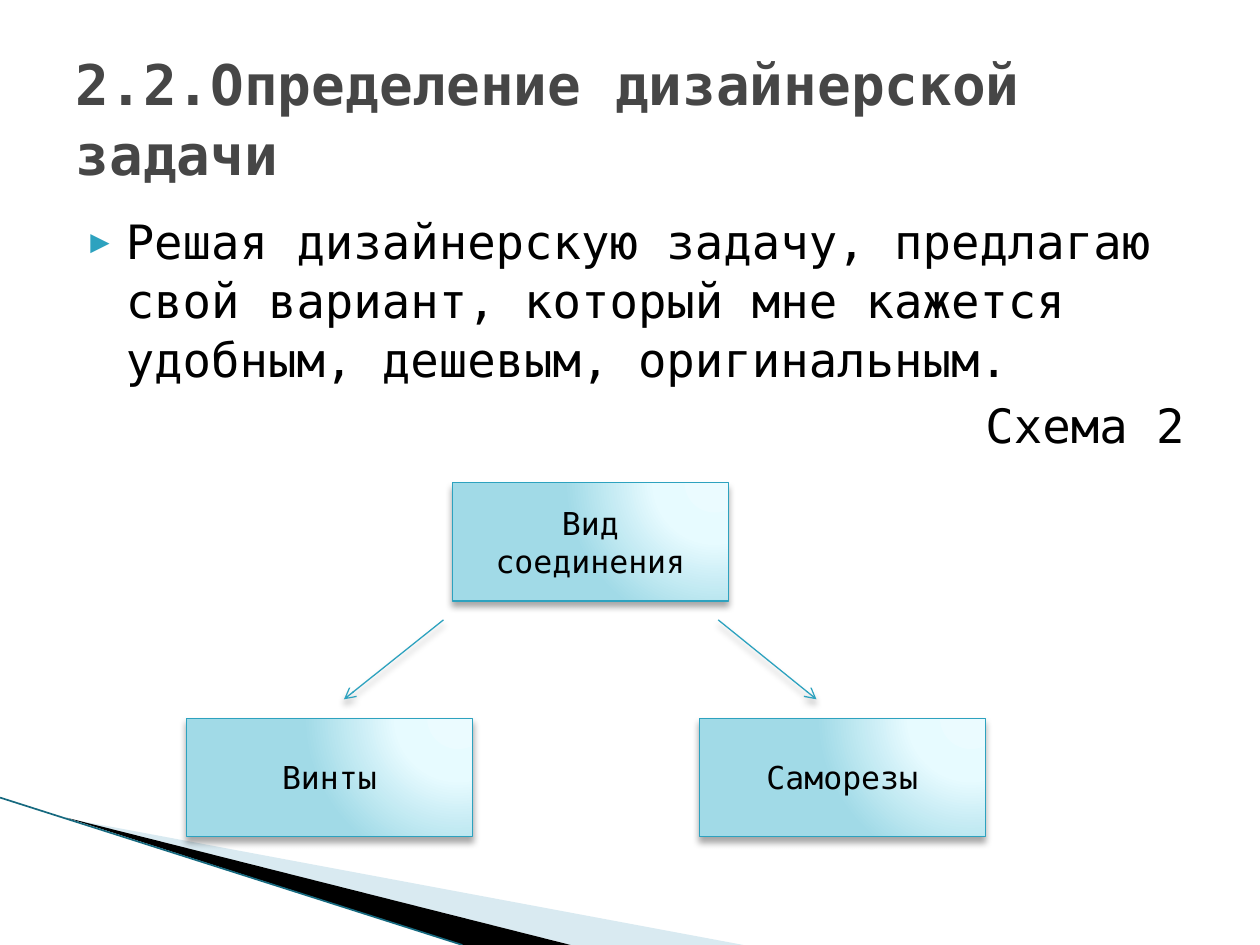
from lxml import etree
from pptx import Presentation
from pptx.dml.color import RGBColor
from pptx.enum.shapes import MSO_CONNECTOR, MSO_SHAPE
from pptx.enum.text import MSO_ANCHOR, MSO_AUTO_SIZE, PP_ALIGN
from pptx.oxml import parse_xml
from pptx.oxml.ns import nsdecls, qn
from pptx.util import Inches, Pt

STRAIGHT = MSO_CONNECTOR.STRAIGHT
RECTANGLE = MSO_SHAPE.RECTANGLE
MIDDLE = MSO_ANCHOR.MIDDLE
NO_AUTOFIT = MSO_AUTO_SIZE.NONE
LEFT, CENTER, RIGHT = PP_ALIGN.LEFT, PP_ALIGN.CENTER, PP_ALIGN.RIGHT

FONT = "DejaVu Sans Mono"
BLACK = RGBColor(0x00, 0x00, 0x00)
TITLE_GRAY = RGBColor(0x46, 0x46, 0x46)
TEAL = RGBColor(0x2D, 0xA2, 0xBF)
DARK_TEAL = RGBColor(0x16, 0x69, 0x7F)
PALE_BLUE = RGBColor(0xD9, 0xEA, 0xF1)
GRADIENT_STOPS = [
    (0, RGBColor(0xEB, 0xFB, 0xFF)),
    (40, RGBColor(0xE7, 0xFB, 0xFF)),
    (100, RGBColor(0xA1, 0xDA, 0xE7)),
]
LINE_SPACING = 1.04


def format_paragraph(paragraph, size, color, alignment, bold=False):
    paragraph.alignment = alignment
    for run in paragraph.runs:
        run.font.name = FONT
        run.font.size = Pt(size)
        run.font.bold = bold
        run.font.color.rgb = color


def add_effects(shape, shadow):
    effects = etree.SubElement(shape._element.spPr, qn("a:effectLst"))
    if shadow:
        effects.append(parse_xml(
            f'<a:outerShdw {nsdecls("a")} blurRad="{Pt(4)}" dist="{Pt(3)}" '
            'dir="5400000" rotWithShape="0"><a:srgbClr val="000000">'
            '<a:alpha val="35000"/></a:srgbClr></a:outerShdw>'))


def add_wedge(slide, points, color):
    corners = [(Inches(x), Inches(y)) for x, y in points]
    builder = slide.shapes.build_freeform(*corners[0])
    builder.add_line_segments(corners[1:], close=True)
    wedge = builder.convert_to_shape()
    wedge.shadow.inherit = False
    wedge.fill.solid()
    wedge.fill.fore_color.rgb = color
    wedge.line.fill.background()


def add_line(slide, start, end, color, width, arrow=False):
    points = [Inches(value) for value in (*start, *end)]
    connector = slide.shapes.add_connector(STRAIGHT, *points)
    connector.line.color.rgb = color
    connector.line.width = Pt(width)
    if arrow:
        line = connector.line._get_or_add_ln()
        etree.SubElement(line, qn("a:tailEnd"), type="arrow")
    add_effects(connector, shadow=arrow)


def add_title(slide, text):
    title = slide.shapes.title
    title.left, title.top = Inches(0.5), Inches(0.3)
    title.width, title.height = Inches(9), Inches(1.25)
    frame = title.text_frame
    frame.text = text
    frame.word_wrap = True
    frame.auto_size = NO_AUTOFIT
    frame.vertical_anchor = MIDDLE
    paragraph = frame.paragraphs[0]
    paragraph.line_spacing = LINE_SPACING
    format_paragraph(paragraph, 32, TITLE_GRAY, LEFT, bold=True)


def add_bullet(paragraph):
    properties = paragraph._p.get_or_add_pPr()
    properties.set("marL", str(Inches(0.4)))
    properties.set("indent", str(Inches(-0.28)))
    color = etree.SubElement(properties, qn("a:buClr"))
    etree.SubElement(color, qn("a:srgbClr"), val=str(TEAL))
    etree.SubElement(properties, qn("a:buSzPct"), val="68000")
    etree.SubElement(properties, qn("a:buFont"), typeface=FONT)
    etree.SubElement(properties, qn("a:buChar"), char="▶")


def add_body(slide, statement, caption):
    box = slide.shapes.add_textbox(Inches(0.5), Inches(1.62), Inches(9), Inches(4.95))
    frame = box.text_frame
    frame.word_wrap = True
    first = frame.paragraphs[0]
    first.text = statement
    add_bullet(first)
    second = frame.add_paragraph()
    second.text = caption
    second.space_before = Pt(4)
    for paragraph, alignment in ((first, LEFT), (second, RIGHT)):
        paragraph.line_spacing = LINE_SPACING
        format_paragraph(paragraph, 27, BLACK, alignment)


def add_gradient(shape):
    stops = "".join(
        f'<a:gs pos="{position * 1000}"><a:srgbClr val="{color}"/></a:gs>'
        for position, color in GRADIENT_STOPS)
    gradient = parse_xml(
        f'<a:gradFill {nsdecls("a")} rotWithShape="1"><a:gsLst>{stops}</a:gsLst>'
        '<a:path path="circle"><a:fillToRect l="95000" t="-106000" r="5000" '
        'b="206000"/></a:path></a:gradFill>')
    shape._element.spPr.find(qn("a:prstGeom")).addnext(gradient)


def add_scheme_box(slide, text, left, top, width):
    box = slide.shapes.add_shape(
        RECTANGLE, Inches(left), Inches(top), Inches(width), Inches(0.94))
    add_gradient(box)
    box.line.color.rgb = TEAL
    box.line.width = Pt(0.75)
    add_effects(box, shadow=True)
    frame = box.text_frame
    frame.text = text
    frame.word_wrap = True
    frame.vertical_anchor = MIDDLE
    format_paragraph(frame.paragraphs[0], 18, BLACK, CENTER)


def main():
    presentation = Presentation()
    presentation.slide_width = Inches(10)
    presentation.slide_height = Inches(7.5)
    slide = presentation.slides.add_slide(presentation.slide_layouts[5])

    add_wedge(slide, [(0.55, 6.5), (5.9, 7.5), (4.53, 7.5)], PALE_BLUE)
    add_wedge(slide, [(0.53, 6.49), (4.53, 7.5), (3.67, 7.5)], BLACK)
    add_line(slide, (0, 6.33), (3.67, 7.5), DARK_TEAL, 0.95)

    add_title(slide, "2.2.Определение дизайнерской задачи")
    add_body(
        slide,
        "Решая дизайнерскую задачу, предлагаю свой вариант, который мне "
        "кажется удобным, дешевым, оригинальным.",
        "Схема 2")

    add_scheme_box(slide, "Вид соединения", 3.59, 3.83, 2.19)
    add_line(slide, (3.52, 4.92), (2.73, 5.55), TEAL, 0.75, arrow=True)
    add_line(slide, (5.7, 4.92), (6.48, 5.55), TEAL, 0.75, arrow=True)
    for text, left in (("Винты", 1.48), ("Саморезы", 5.55)):
        add_scheme_box(slide, text, left, 5.7, 2.27)

    presentation.save("out.pptx")


if __name__ == "__main__":
    main()
